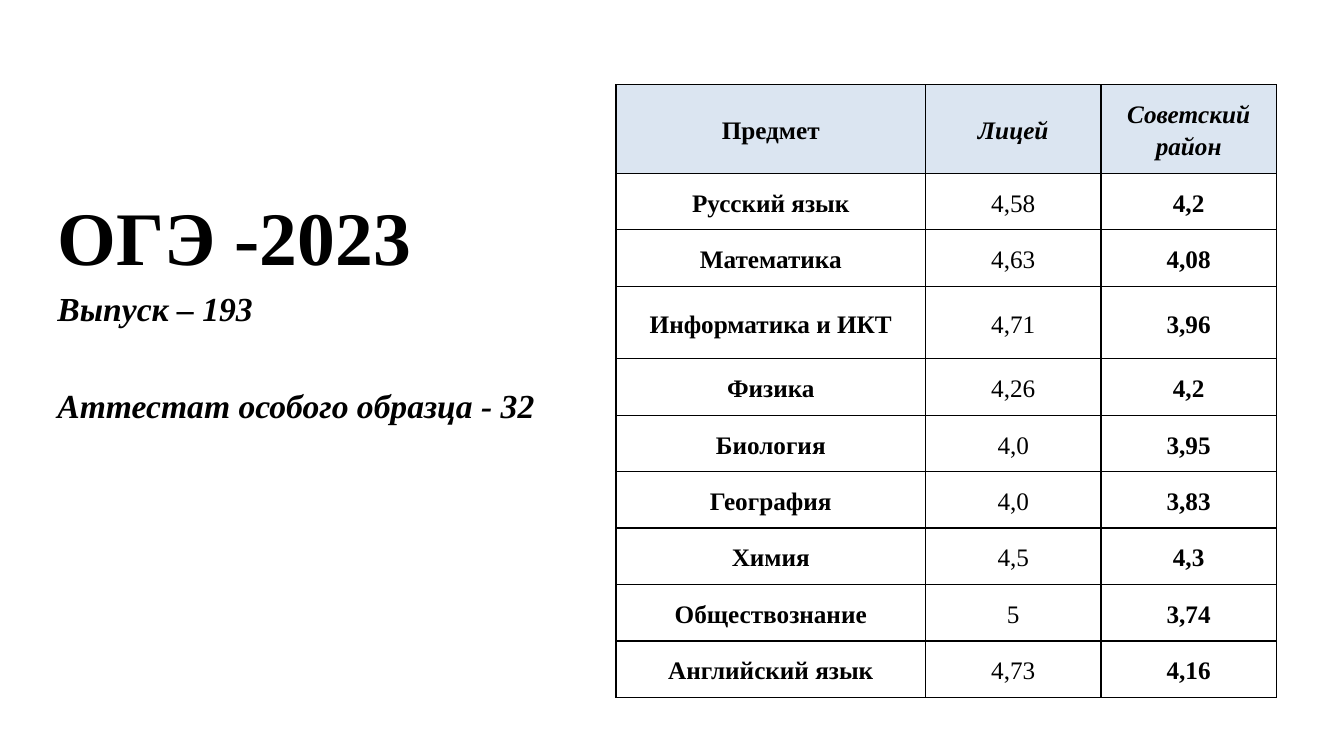
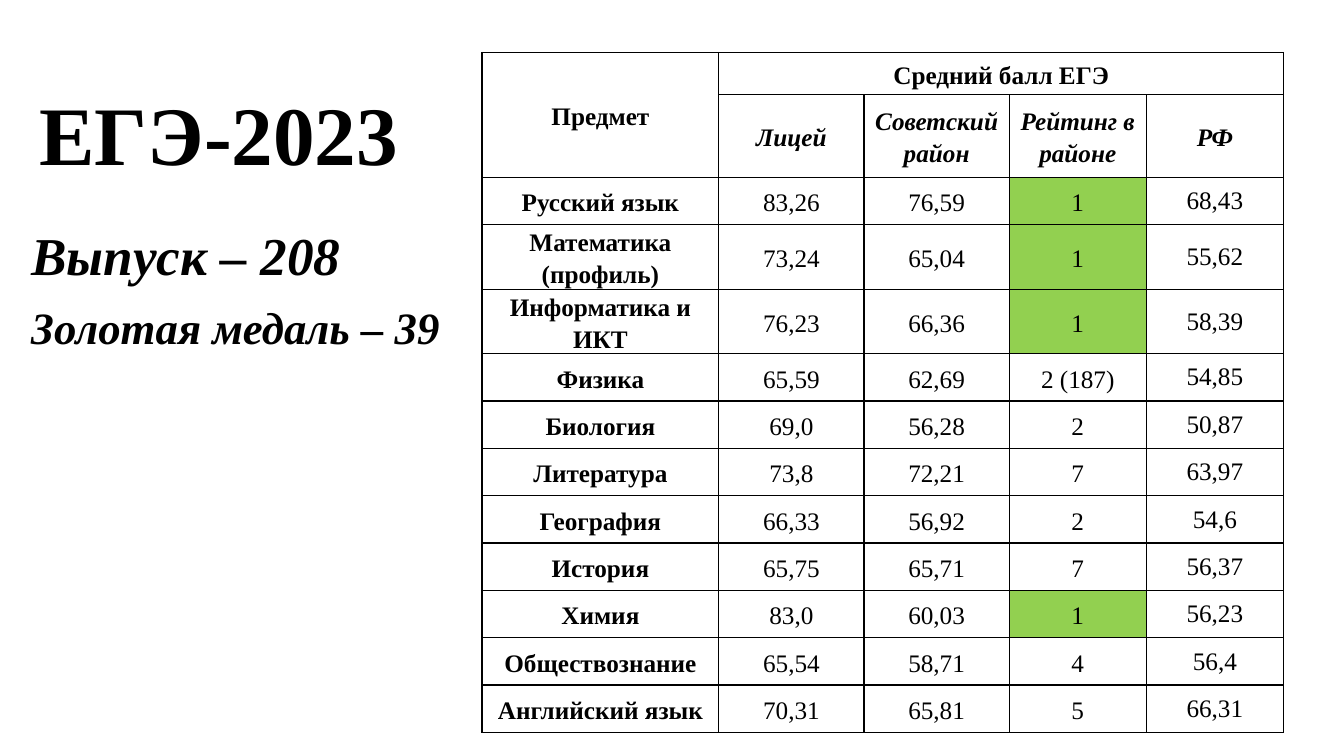
from lxml import etree
from pptx import Presentation
from pptx.dml.color import RGBColor
from pptx.enum.text import MSO_ANCHOR, MSO_AUTO_SIZE, PP_ALIGN
from pptx.oxml.ns import qn
from pptx.util import Inches, Pt

LEFT, CENTER = PP_ALIGN.LEFT, PP_ALIGN.CENTER
BOTTOM, MIDDLE, TOP = MSO_ANCHOR.BOTTOM, MSO_ANCHOR.MIDDLE, MSO_ANCHOR.TOP
NO_FIT = MSO_AUTO_SIZE.NONE
FACE = "Times New Roman"
BLACK, WHITE, BLUE, GREEN = "000000", "FFFFFF", "DBE5F1", "92D050"
FLUSH, WIDE, RAISED = (0, 0, 0, 0), (0.1, 0.05, 0.1, 0.05), (0.07, 0.01, 0.07, 0.05)

OGE = [
    ("Предмет", "Лицей", "Советский район"),
    ("Русский язык", "4,58", "4,2"),
    ("Математика", "4,63", "4,08"),
    ("Информатика и ИКТ", "4,71", "3,96"),
    ("Физика", "4,26", "4,2"),
    ("Биология", "4,0", "3,95"),
    ("География", "4,0", "3,83"),
    ("Химия", "4,5", "4,3"),
    ("Обществознание", "5", "3,74"),
    ("Английский язык", "4,73", "4,16"),
]
EGE = [
    ("Предмет", "Средний балл ЕГЭ", "", "", ""),
    ("", "Лицей", "Советский район", "Рейтинг в районе", "РФ"),
    ("Русский язык", "83,26", "76,59", "1", "68,43"),
    ("Математика (профиль)", "73,24", "65,04", "1", "55,62"),
    ("Информатика и ИКТ", "76,23", "66,36", "1", "58,39"),
    ("Физика", "65,59", "62,69", "2 (187)", "54,85"),
    ("Биология", "69,0", "56,28", "2", "50,87"),
    ("Литература", "73,8", "72,21", "7", "63,97"),
    ("География", "66,33", "56,92", "2", "54,6"),
    ("История", "65,75", "65,71", "7", "56,37"),
    ("Химия", "83,0", "60,03", "1", "56,23"),
    ("Обществознание", "65,54", "58,71", "4", "56,4"),
    ("Английский язык", "70,31", "65,81", "5", "66,31"),
]


def color(code):
    """Turn a hex string into a colour."""
    return RGBColor.from_string(code)


def style(para, size, bold=True, italic=False):
    """Set the shared font of a paragraph."""
    font = para.font
    font.name, font.size = FACE, Pt(size)
    font.bold, font.italic = bold, italic
    font.color.rgb = color(BLACK)


def fill_box(shape, box, lines, anchor, italic=False):
    """Move a placeholder and write (text, size, space before) lines."""
    shape.left, shape.top, shape.width, shape.height = map(Inches, box)
    frame = shape.text_frame
    frame.text = "\n".join(text for text, _, _ in lines)
    frame.word_wrap, frame.auto_size = True, NO_FIT
    frame.vertical_anchor = anchor
    for para, (_, size, gap) in zip(frame.paragraphs, lines):
        para.alignment, para.space_before = LEFT, Pt(gap)
        props = para._p.get_or_add_pPr()
        props.set("marL", "0")
        props.set("indent", "0")
        etree.SubElement(props, qn("a:buNone"))
        style(para, size, italic=italic)


def add_page(deck, title, title_box, size, lines, body_box):
    """Add a slide with a title and a list of facts."""
    page = deck.slides.add_slide(deck.slide_layouts[1])
    fill_box(page.shapes.title, title_box, [(title, size, 0)], BOTTOM)
    fill_box(page.placeholders[1], body_box, lines, TOP, italic=True)
    return page


def add_edges(cell):
    """Draw a thin black line on each side of a cell."""
    props = cell._tc.get_or_add_tcPr()
    for side in ("a:lnL", "a:lnR", "a:lnT", "a:lnB"):
        line = etree.SubElement(props, qn(side), w=str(Pt(1)))
        solid = etree.SubElement(line, qn("a:solidFill"))
        etree.SubElement(solid, qn("a:srgbClr"), val=BLACK)


def set_cell(cell, text, bold, italic, pads, shade):
    """Write and format one table cell."""
    add_edges(cell)
    cell.fill.solid()
    cell.fill.fore_color.rgb = color(shade)
    cell.vertical_anchor = MIDDLE
    (cell.margin_left, cell.margin_top,
     cell.margin_right, cell.margin_bottom) = map(Inches, pads)
    cell.text = text
    para = cell.text_frame.paragraphs[0]
    para.alignment, para.line_spacing = CENTER, 1.15
    style(para, 18, bold, italic)


def add_grid(page, spot, data, widths, heights, heads, strong, pads, shade):
    """Add a score table; shade(row, col) gives the fill of a cell."""
    left, top = spot
    table = page.shapes.add_table(
        len(data), len(widths), Inches(left), Inches(top),
        Inches(sum(widths)), Inches(sum(heights))).table
    table.first_row = table.horz_banding = False
    for col, width in zip(table.columns, widths):
        col.width = Inches(width)
    for row, height in zip(table.rows, heights):
        row.height = Inches(height)
    for r, line in enumerate(data):
        for c, text in enumerate(line):
            head = r < heads
            inner = WIDE if head and pads[c] == RAISED else pads[c]
            set_cell(table.cell(r, c), text, head or c in strong,
                     r == heads - 1 and c > 0, inner, shade(r, c))
    return table


def main():
    """Build both result slides."""
    deck = Presentation()
    deck.slide_width, deck.slide_height = Inches(13.33), Inches(7.5)

    page = add_page(
        deck, "ОГЭ -2023", (0.47, 1.83, 5.06, 1), 54,
        [("Выпуск – 193", 24, 0), ("Аттестат особого образца - 32", 24, 40)],
        (0.47, 2.81, 5.06, 1.25))
    add_grid(page, (6.11, 0.84), OGE, [3.07, 1.74, 1.74],
             [0.88] + [0.56] * 2 + [0.72] + [0.56] * 6, 1, (0, 2),
             (FLUSH, FLUSH, WIDE), lambda r, c: WHITE if r else BLUE)

    page = add_page(
        deck, "ЕГЭ-2023", (0.29, 0.71, 4.3, 1.15), 59.4,
        [("Выпуск – 208", 38, 0), ("Золотая медаль – 39", 32, 9)],
        (0.21, 2.16, 4.5, 1.42))
    table = add_grid(
        page, (4.78, 0.52), EGE, [2.35, 1.44, 1.44, 1.36, 1.36],
        [0.42, 0.82, 0.47] + [0.64] * 2 + [0.47] * 8, 2, (0,),
        (FLUSH, FLUSH, WIDE, FLUSH, RAISED),
        lambda r, c: GREEN if c == 3 and EGE[r][c] == "1" else WHITE)
    table.cell(0, 0).merge(table.cell(1, 0))
    table.cell(0, 1).merge(table.cell(0, 4))

    deck.save("out.pptx")


if __name__ == "__main__":
    main()
